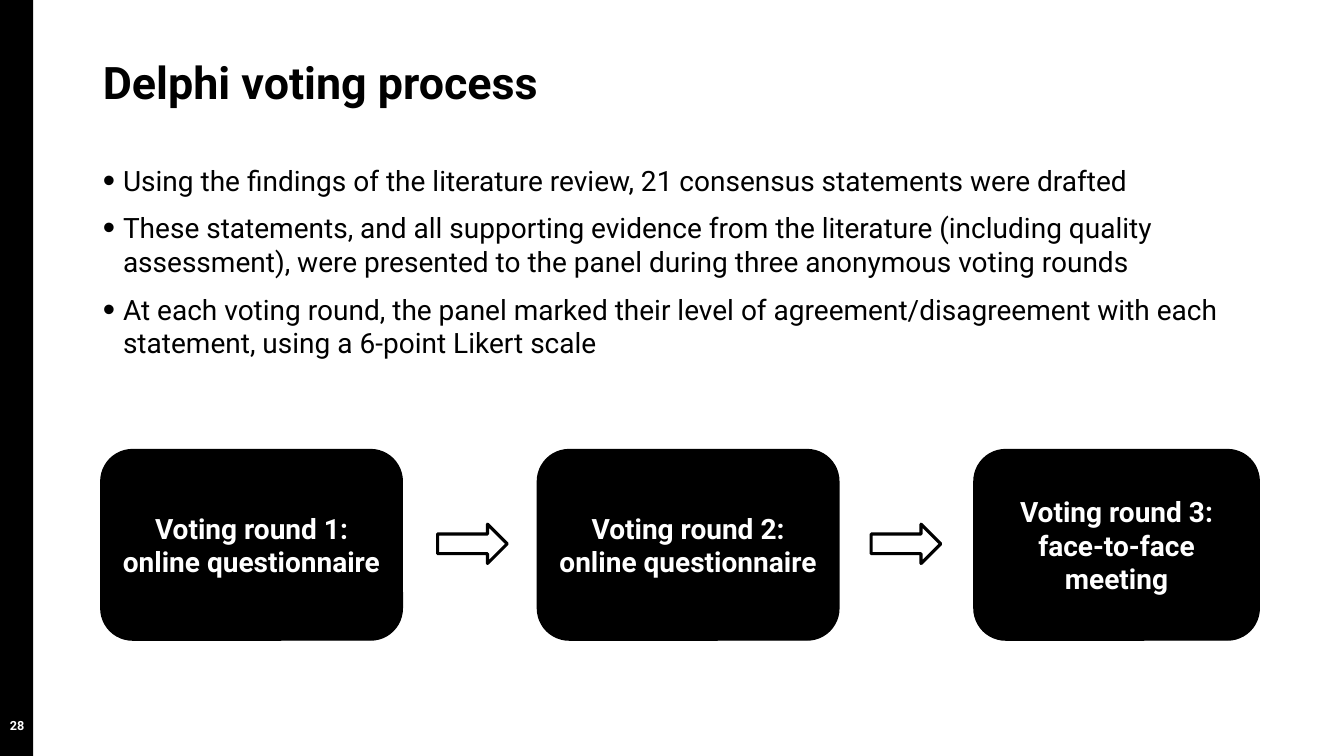
from dataclasses import dataclass

from lxml.etree import SubElement
from pptx import Presentation
from pptx.dml.color import RGBColor
from pptx.enum.shapes import MSO_SHAPE as Preset
from pptx.enum.text import MSO_ANCHOR as Anchor, MSO_AUTO_SIZE as AutoSize, PP_ALIGN as Align
from pptx.oxml.ns import qn
from pptx.util import Inches, Pt


@dataclass(frozen=True)
class Theme:
    """Colours, typeface and type sizes of the slide."""
    font: str = "Roboto"
    dark: RGBColor = RGBColor(0, 0, 0)
    light: RGBColor = RGBColor(255, 255, 255)
    title_size: int = 32
    text_size: int = 20
    number_size: int = 9


THEME = Theme()

STATEMENTS = (
    "Using the findings of the literature review, 21 consensus statements were drafted",
    "These statements, and all supporting evidence from the literature (including quality "
    "assessment), were presented to the panel during three anonymous voting rounds",
    "At each voting round, the panel marked their level of agreement/disagreement with each "
    "statement, using a 6-point Likert scale",
)
ROUNDS = (
    ("Voting round 1: online questionnaire", 2.99),
    ("Voting round 2: online questionnaire", 2.99),
    ("Voting round 3: face-to-face meeting", 2.83),
)
ROUND_LEFT, ROUND_TOP, ROUND_HEIGHT, ROUND_PITCH = 1, 4.46, 1.89, 4.33
ARROW_LEFT, ARROW_TOP, ARROW_PITCH = 4.34, 5.2, 4.3


def write(paragraph, text, size, color, bold=False, align=Align.LEFT):
    """Add one formatted run to a paragraph."""
    paragraph.alignment = align
    run = paragraph.add_run()
    run.text = text
    run.font.name = THEME.font
    run.font.size = Pt(size)
    run.font.bold = bold
    run.font.color.rgb = color


def place(holder, left, top, width, height):
    """Move a placeholder and give its text frame the slide's margins."""
    holder.left, holder.top = Inches(left), Inches(top)
    holder.width, holder.height = Inches(width), Inches(height)
    frame = holder.text_frame
    frame.auto_size = AutoSize.NONE
    frame.word_wrap = True
    frame.vertical_anchor = Anchor.TOP
    frame.margin_left = frame.margin_right = Inches(0.1)
    frame.margin_top = frame.margin_bottom = 0
    return frame


def add_bullet(paragraph):
    """Give a paragraph a hanging round bullet."""
    properties = paragraph._p.get_or_add_pPr()
    properties.set("marL", str(Inches(0.2)))
    properties.set("indent", str(Inches(-0.2)))
    bullet_color = SubElement(properties, qn("a:buClr"))
    SubElement(bullet_color, qn("a:srgbClr"), val=str(THEME.dark))
    SubElement(properties, qn("a:buSzPct"), val="125000")
    SubElement(properties, qn("a:buChar"), char="•")


def add_statements(frame):
    """Fill the body with the bulleted statements."""
    for index, statement in enumerate(STATEMENTS):
        paragraph = frame.add_paragraph() if index else frame.paragraphs[0]
        add_bullet(paragraph)
        paragraph.space_before = Pt(10 if index else 0)
        write(paragraph, statement, THEME.text_size, THEME.dark)


def add_block(slide, preset, left, top, width, height, fill, line_width=0):
    """Draw a flat preset shape, outlined when a line width is given."""
    block = slide.shapes.add_shape(
        preset, Inches(left), Inches(top), Inches(width), Inches(height))
    block.shadow.inherit = False
    block.fill.solid()
    block.fill.fore_color.rgb = fill
    if line_width:
        block.line.color.rgb = THEME.dark
        block.line.width = Pt(line_width)
    else:
        block.line.fill.background()
    return block


def add_round(slide, label, left, width):
    """Draw one voting round as a labelled rounded box."""
    box = add_block(slide, Preset.ROUNDED_RECTANGLE, left, ROUND_TOP, width, ROUND_HEIGHT,
                    THEME.dark, 1)
    frame = box.text_frame
    frame.word_wrap = True
    frame.vertical_anchor = Anchor.MIDDLE
    write(frame.paragraphs[0], label, THEME.text_size, THEME.light, True, Align.CENTER)


def add_page_number(slide, number):
    """Put the page number at the foot of the side band."""
    box = slide.shapes.add_textbox(Inches(-0.01), Inches(6.87), Inches(0.36), Inches(0.4))
    frame = box.text_frame
    frame.word_wrap = False
    frame.vertical_anchor = Anchor.BOTTOM
    frame.margin_bottom = 0
    write(frame.paragraphs[0], number, THEME.number_size, THEME.light, True, Align.CENTER)


def main():
    """Build the slide and save it."""
    deck = Presentation()
    deck.slide_width, deck.slide_height = Inches(13.33), Inches(7.5)
    slide = deck.slides.add_slide(deck.slide_layouts[1])

    add_block(slide, Preset.RECTANGLE, 0, 0, 0.33, 7.5, THEME.dark)
    heading = place(slide.shapes.title, 0.92, 0.54, 11.05, 0.88)
    write(heading.paragraphs[0], "Delphi voting process", THEME.title_size, THEME.dark, True)
    add_statements(place(slide.placeholders[1], 0.92, 1.62, 12.11, 2.16))

    for index, (label, width) in enumerate(ROUNDS):
        add_round(slide, label, ROUND_LEFT + index * ROUND_PITCH, width)
    for index in range(len(ROUNDS) - 1):
        add_block(slide, Preset.RIGHT_ARROW, ARROW_LEFT + index * ARROW_PITCH, ARROW_TOP,
                  0.69, 0.39, THEME.light, 2.25)
    add_page_number(slide, "28")
    deck.save("out.pptx")


if __name__ == "__main__":
    main()
